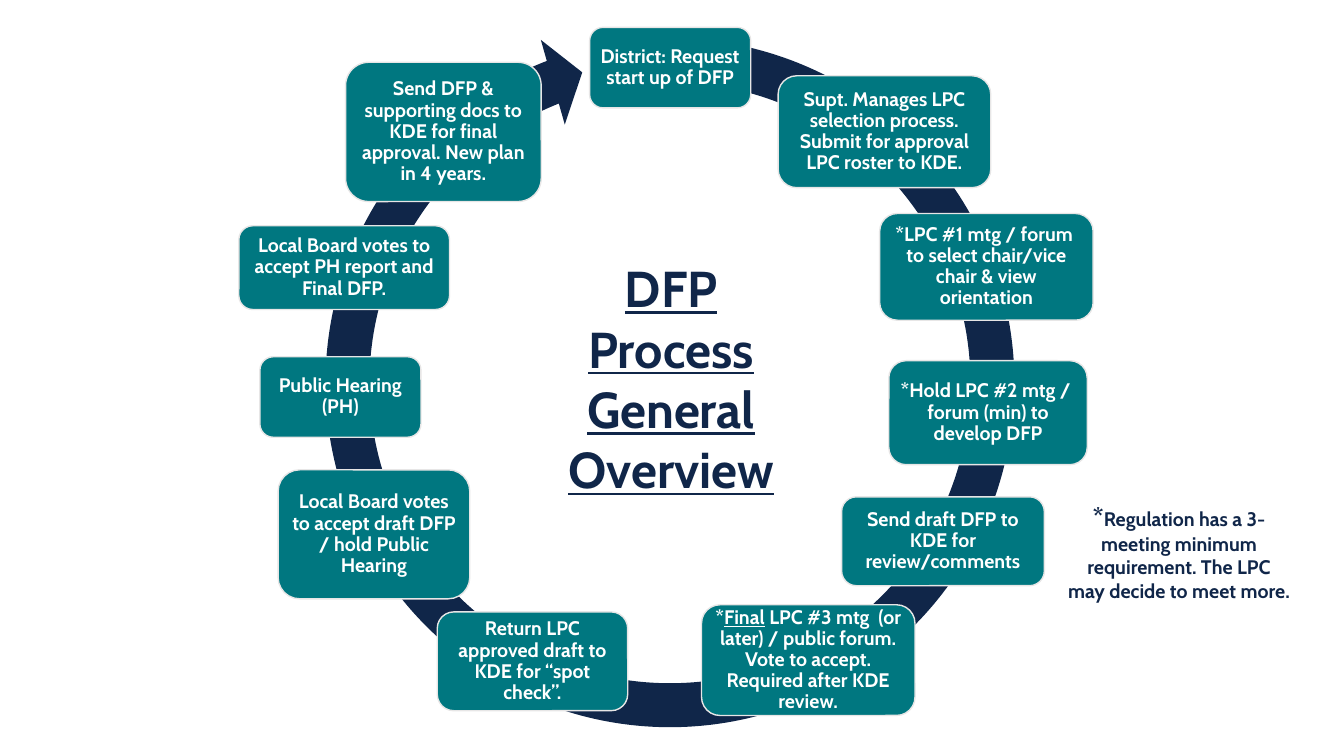
import pptx
import pptx.dml.color
import pptx.enum.shapes
import pptx.enum.text
import pptx.util

Cm = pptx.util.Cm
SHAPES = pptx.enum.shapes.MSO_SHAPE
ANCHOR = pptx.enum.text.MSO_ANCHOR

FONT = "Cabin"
NAVY, TEAL, PALE, WHITE = "102649", "007780", "E7E6E6", "FFFFFF"

# Places are left, top, width, height in centimetres.
TITLE = "DFP Process General Overview"
TITLE_PLACE = (13.89, 6.35, 6.05, 6.4)
ARROW_PLACE = (7.65, 0.41, 18.47, 18.47)
ARROW_ADJUSTMENTS = (0.06, 3.31, 149.22, 167.21, 0.06)
NOTE_PLACE = (26.64, 12.5, 6.15, 3.43)
NOTE = [
    ("*", {"size": 18}),
    ("Regulation has a 3-meeting minimum requirement. "
     "The LPC may decide to meet more.", {}),
]
STEPS = [
    ((14.86, 0.69, 4.06, 2.03), "District: Request start up of DFP"),
    ((19.61, 1.91, 5.36, 2.82),
     "Supt. Manages LPC selection process. Submit for approval LPC roster to KDE."),
    ((22.17, 5.38, 5.38, 2.69),
     "*LPC #1 mtg / forum  to select chair/vice chair & view orientation"),
    ((22.4, 9.09, 5, 2.62), "*Hold LPC #2 mtg /  forum (min) to develop DFP"),
    ((21.21, 12.52, 5.11, 2.24), "Send draft DFP to KDE for review/comments"),
    ((17.68, 15.24, 5.38, 2.79), [
        ("*", {}),
        ("Final", {"underline": True}),
        (" LPC #3 mtg  (or later) / public forum. Vote to accept. "
         "Required after KDE review.", {}),
    ]),
    ((11.02, 15.42, 4.8, 2.49), "Return LPC approved draft to KDE for “spot check”."),
    ((7.01, 11.84, 4.83, 3.25),
     "Local Board votes to accept draft DFP / hold Public Hearing"),
    ((6.55, 8.99, 4.06, 2.03), "Public Hearing (PH)"),
    ((6.02, 5.69, 5.31, 2.11), "Local Board votes to accept PH report and Final DFP."),
    ((8.71, 1.57, 4.93, 3.51),
     "Send DFP & supporting docs to KDE for final approval. New plan in 4 years."),
]


def rgb(color):
    return pptx.dml.color.RGBColor.from_string(color)


def write_text(shape, text, size=14, color=NAVY, underline=False,
               spacing=1.0, anchor=ANCHOR.TOP, margins=(0.25, 0.13)):
    """Fill a shape with one centred paragraph of a string or (text, format) runs."""
    frame = shape.text_frame
    frame.word_wrap = True
    frame.auto_size = pptx.enum.text.MSO_AUTO_SIZE.NONE
    frame.vertical_anchor = anchor
    frame.margin_left = frame.margin_right = Cm(margins[0])
    frame.margin_top = frame.margin_bottom = Cm(margins[1])
    paragraph = frame.paragraphs[0]
    paragraph.alignment = pptx.enum.text.PP_ALIGN.CENTER
    paragraph.line_spacing = spacing
    runs = [(text, {})] if isinstance(text, str) else text
    for words, changes in runs:
        run = paragraph.add_run()
        run.text = words
        run.font.name = FONT
        run.font.bold = True
        run.font.size = pptx.util.Pt(changes.get("size", size))
        run.font.underline = changes.get("underline", underline)
        run.font.color.rgb = rgb(color)


def add_shape(slide, kind, place, fill, line=None):
    shape = slide.shapes.add_shape(kind, *map(Cm, place))
    shape.shadow.inherit = False
    shape.fill.solid()
    shape.fill.fore_color.rgb = rgb(fill)
    if line:
        shape.line.color.rgb = rgb(line)
        shape.line.width = pptx.util.Pt(1)
    else:
        shape.line.fill.background()
    return shape


def main():
    presentation = pptx.Presentation()
    presentation.slide_width = Cm(33.87)
    presentation.slide_height = Cm(19.05)
    slide = presentation.slides.add_slide(presentation.slide_layouts[5])

    title = slide.shapes.title
    title.left, title.top, title.width, title.height = map(Cm, TITLE_PLACE)
    write_text(title, TITLE, size=36, underline=True)

    arrow = add_shape(slide, SHAPES.CIRCULAR_ARROW, ARROW_PLACE, NAVY)
    for index, value in enumerate(ARROW_ADJUSTMENTS):
        arrow.adjustments[index] = value

    for place, text in STEPS:
        step = add_shape(slide, SHAPES.ROUNDED_RECTANGLE, place, TEAL, PALE)
        write_text(step, text, color=WHITE, spacing=0.9,
                   anchor=ANCHOR.MIDDLE, margins=(0.15, 0.15))

    note = slide.shapes.add_textbox(*map(Cm, NOTE_PLACE))
    write_text(note, NOTE)

    presentation.save("out.pptx")


if __name__ == "__main__":
    main()
